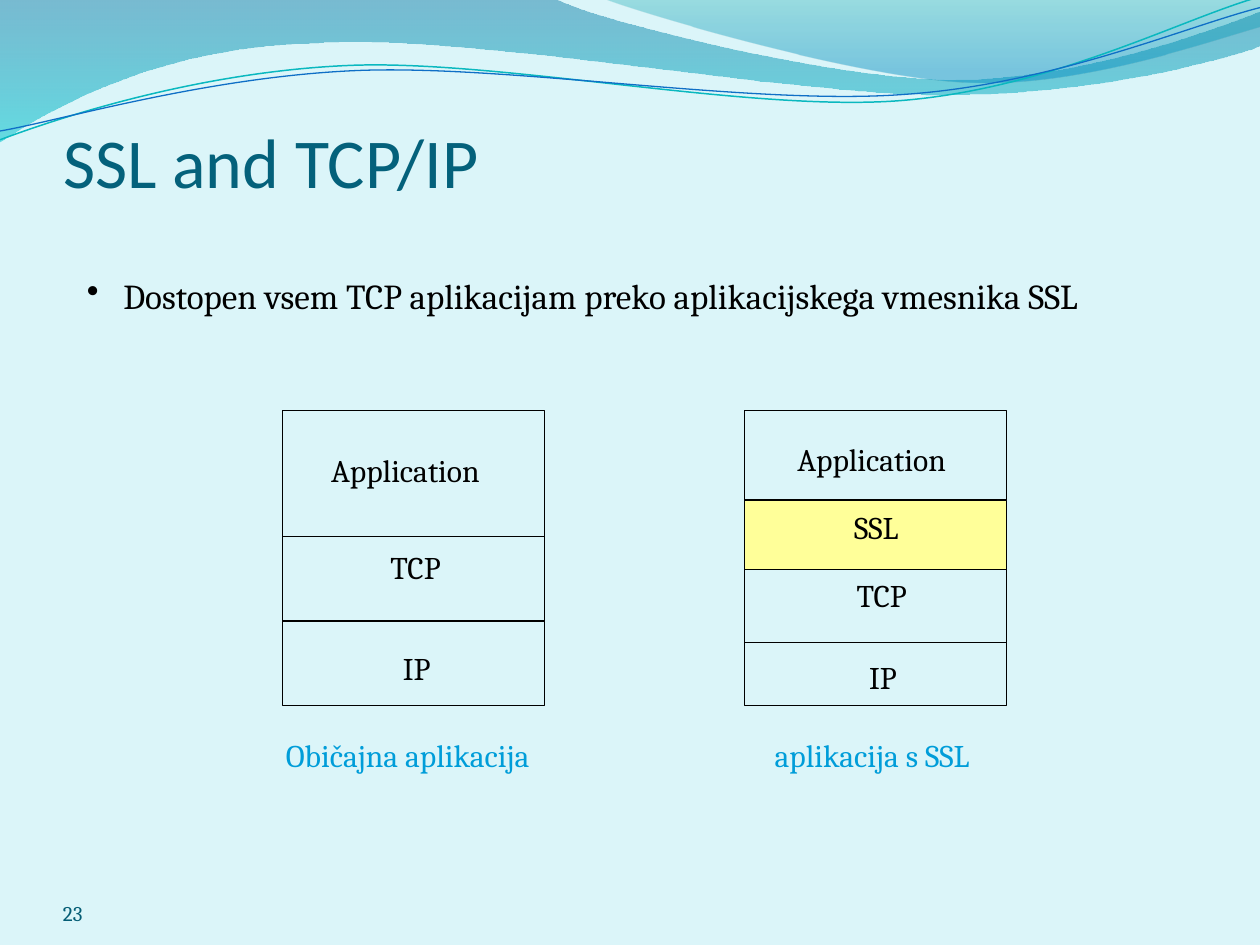
from dataclasses import dataclass
from math import cos, radians, sin
from typing import Optional

from lxml.etree import SubElement
from pptx import Presentation
from pptx.dml.color import RGBColor
from pptx.enum.shapes import MSO_SHAPE
from pptx.enum.text import MSO_ANCHOR, MSO_AUTO_SIZE
from pptx.oxml.ns import qn
from pptx.util import Inches, Pt

BACKGROUND = RGBColor(0xDB, 0xF5, 0xF9)
TITLE = RGBColor(0x04, 0x61, 0x7B)
NUMBER = RGBColor(0x04, 0x5D, 0x75)
CAPTION = RGBColor(0x00, 0x9D, 0xD9)
BLACK = RGBColor(0x00, 0x00, 0x00)
YELLOW = RGBColor(0xFF, 0xFF, 0x99)
DEEP_BLUE = RGBColor(0x00, 0x74, 0xA1)
AQUA = RGBColor(0x00, 0xC6, 0xCF)
TEAL = RGBColor(0x00, 0xA1, 0xA9)
SKY = RGBColor(0x00, 0x8B, 0xBF)
TEAL_LINE = RGBColor(0x0A, 0xB8, 0xBF)
BLUE_LINE = RGBColor(0x0F, 0x6F, 0xC6)

STACK_TOP, STACK_WIDTH = 3.26, 2.08
CAPTION_TOP = 5.79
LINE_TILT = -2.7


@dataclass(frozen=True)
class Stop:
    position: float
    color: RGBColor
    alpha: int


@dataclass(frozen=True)
class Wave:
    box: tuple
    segments: tuple
    stops: tuple = ()
    line: Optional[RGBColor] = None
    weight: float = 0.75
    tilt: float = 0


@dataclass(frozen=True)
class Layer:
    label: str
    height: float
    label_left: float
    label_top: float
    label_width: float
    fill: Optional[RGBColor] = None


@dataclass(frozen=True)
class Stack:
    left: float
    layers: tuple
    caption: str
    caption_left: float
    caption_width: float


FILLED_WAVES = (
    Wave((-0.01, -0.01, 10.02, 1.14),
         ((0, 0), (4.4, -0.01), (4.76, 0.17, 6.64, 0.63, 7.58, 0.63),
          (8.53, 0.63, 9.58, 0.26, 10, 0.09), (10.01, 0.36),
          (9.83, 0.44, 8.7, 0.76, 7.46, 0.75), (6.22, 0.75, 3.82, 0.28, 2.57, 0.34),
          (1.29, 0.36, 0.46, 0.83, -0.01, 1.13), (0, 0)),
         stops=(Stop(0, DEEP_BLUE, 45), Stop(1, AQUA, 55))),
    Wave((4.79, -0.01, 5.21, 0.7),
         ((4.79, -0.01), (5.09, 0.11, 6.82, 0.62, 7.69, 0.65),
          (8.56, 0.69, 9.61, 0.32, 10, 0.21), (10, 0), (4.79, -0.01)),
         stops=(Stop(0, TEAL, 30), Stop(0.8, SKY, 45))),
)

LINE_WAVES = (
    Wave((-0.02, 0.22, 10.02, 0.71),
         ((0, 1.11), (0.48, 0.93, 1.58, 0.57, 2.77, 0.52),
          (3.95, 0.47, 5.93, 0.89, 7.13, 0.8), (8.33, 0.71, 9.38, 0.15, 9.98, -0.02)),
         line=TEAL_LINE, weight=0.85, tilt=LINE_TILT),
    Wave((-0.02, 0.3, 10.03, 0.58),
         ((0, 1.04), (0.47, 0.96, 1.64, 0.61, 2.83, 0.56),
          (4.03, 0.51, 5.97, 0.84, 7.17, 0.75), (8.36, 0.67, 9.41, 0.21, 10, 0.06)),
         line=BLUE_LINE, tilt=LINE_TILT),
)

STACKS = (
    Stack(2.24, (Layer("Application", 1, 2.53, 3.53, 1.64),
                 Layer("TCP", 0.67, 3, 4.3, 0.7),
                 Layer("IP", 0.67, 3.1, 5.1, 0.5)),
          "Običajna aplikacija", 2.17, 2.28),
    Stack(5.91, (Layer("Application", 0.71, 6.23, 3.44, 1.64),
                 Layer("SSL", 0.55, 6.68, 3.98, 0.74, YELLOW),
                 Layer("TCP", 0.58, 6.7, 4.52, 0.7),
                 Layer("IP", 0.5, 6.8, 5.17, 0.5)),
          "aplikacija s SSL", 6.05, 1.85),
)


def to_local(x: float, y: float, wave: Wave) -> tuple:
    left, top, width, height = wave.box
    dx, dy = x - left - width / 2, y - top - height / 2
    c, n = cos(radians(-wave.tilt)), sin(radians(-wave.tilt))
    return Inches(dx * c - dy * n + width / 2), Inches(dx * n + dy * c + height / 2)


def draw_wave(shapes, wave: Wave) -> None:
    anchors = [to_local(*segment[-2:], wave) for segment in wave.segments]
    builder = shapes.build_freeform(*anchors[0])
    builder.add_line_segments(anchors[1:], close=False)
    sp = builder.convert_to_shape()
    sp.left, sp.top, sp.width, sp.height = map(Inches, wave.box)
    sp.rotation = wave.tilt
    sp.shadow.inherit = False
    outline = next(sp._element.iter(qn("a:path")))
    for child in list(outline):
        outline.remove(child)
    outline.set("w", str(sp.width))
    outline.set("h", str(sp.height))
    for i, segment in enumerate(wave.segments):
        tag = "a:moveTo" if i == 0 else "a:lnTo" if len(segment) == 2 else "a:cubicBezTo"
        step = SubElement(outline, qn(tag))
        for x, y in zip(segment[::2], segment[1::2]):
            px, py = to_local(x, y, wave)
            SubElement(step, qn("a:pt"), x=str(px), y=str(py))
    if wave.line is None:
        SubElement(outline, qn("a:close"))
        sp.line.fill.background()
        sp.fill.gradient()
        sp.fill.gradient_angle = 270
        for target, stop in zip(sp.fill.gradient_stops, wave.stops):
            target.position = stop.position
            target.color.rgb = stop.color
        for color, stop in zip(sp._element.spPr.iter(qn("a:srgbClr")), wave.stops):
            SubElement(color, qn("a:alpha"), val=str(stop.alpha * 1000))
    else:
        sp.fill.background()
        sp.line.color.rgb = wave.line
        sp.line.width = Pt(wave.weight)


def add_text(shapes, text: str, left: float, top: float, width: float, height: float, *,
             size: float = 18, font: str = "Cambria", color: RGBColor = BLACK,
             anchor: MSO_ANCHOR = MSO_ANCHOR.TOP, wrap: bool = True, grow: bool = False,
             insets: tuple = (0.1, 0.05, 0.1, 0.05), bullet: bool = False) -> None:
    sp = shapes.add_textbox(Inches(left), Inches(top), Inches(width), Inches(height))
    tf = sp.text_frame
    tf.word_wrap = wrap
    tf.auto_size = MSO_AUTO_SIZE.SHAPE_TO_FIT_TEXT if grow else MSO_AUTO_SIZE.NONE
    tf.vertical_anchor = anchor
    tf.margin_left, tf.margin_top, tf.margin_right, tf.margin_bottom = map(Inches, insets)
    p = tf.paragraphs[0]
    r = p.add_run()
    r.text = text
    r.font.size, r.font.name, r.font.color.rgb = Pt(size), font, color
    if bullet:
        p.line_spacing = 0.8
        pPr = p._p.get_or_add_pPr()
        pPr.set("marL", str(Inches(0.29)))
        pPr.set("indent", str(Inches(-0.29)))
        SubElement(pPr, qn("a:buFontTx"))
        SubElement(pPr, qn("a:buChar"), char="•")


def draw_stack(shapes, stack: Stack) -> None:
    top = STACK_TOP
    for layer in stack.layers:
        sp = shapes.add_shape(MSO_SHAPE.RECTANGLE, Inches(stack.left), Inches(top),
                              Inches(STACK_WIDTH), Inches(layer.height))
        sp.shadow.inherit = False
        sp.line.color.rgb = BLACK
        sp.line.width = Pt(0.75)
        if layer.fill is None:
            sp.fill.background()
        else:
            sp.fill.solid()
            sp.fill.fore_color.rgb = layer.fill
        add_text(shapes, layer.label, layer.label_left, layer.label_top,
                 layer.label_width, 0.43, wrap=False, grow=True)
        top += layer.height
    add_text(shapes, stack.caption, stack.caption_left, CAPTION_TOP, stack.caption_width, 0.4,
             color=CAPTION, wrap=False, grow=True)


def main() -> None:
    """Build the slide on SSL and the TCP/IP layers."""
    prs = Presentation()
    prs.slide_width, prs.slide_height = Inches(10), Inches(7.5)
    s = prs.slides.add_slide(prs.slide_layouts[6])
    s.background.fill.solid()
    s.background.fill.fore_color.rgb = BACKGROUND
    for wave in FILLED_WAVES:
        draw_wave(s.shapes, wave)
    lines = s.shapes.add_group_shape().shapes
    for wave in LINE_WAVES:
        draw_wave(lines, wave)
    add_text(s.shapes, "23", 0.5, 6.95, 2.33, 0.4, size=12, color=NUMBER,
             anchor=MSO_ANCHOR.BOTTOM, insets=(0, 0, 0, 0))
    add_text(s.shapes, "SSL and TCP/IP", 0.5, 0.36, 9.08, 1.25, size=40, font="Calibri",
             color=TITLE, anchor=MSO_ANCHOR.BOTTOM, insets=(0, 0.05, 0, 0))
    for stack in STACKS:
        draw_stack(s.shapes.add_group_shape().shapes, stack)
    add_text(s.shapes, "Dostopen vsem TCP aplikacijam preko aplikacijskega vmesnika SSL",
             0.59, 2.19, 8.98, 0.38, size=20, grow=True, bullet=True)
    prs.save("out.pptx")


if __name__ == "__main__":
    main()
